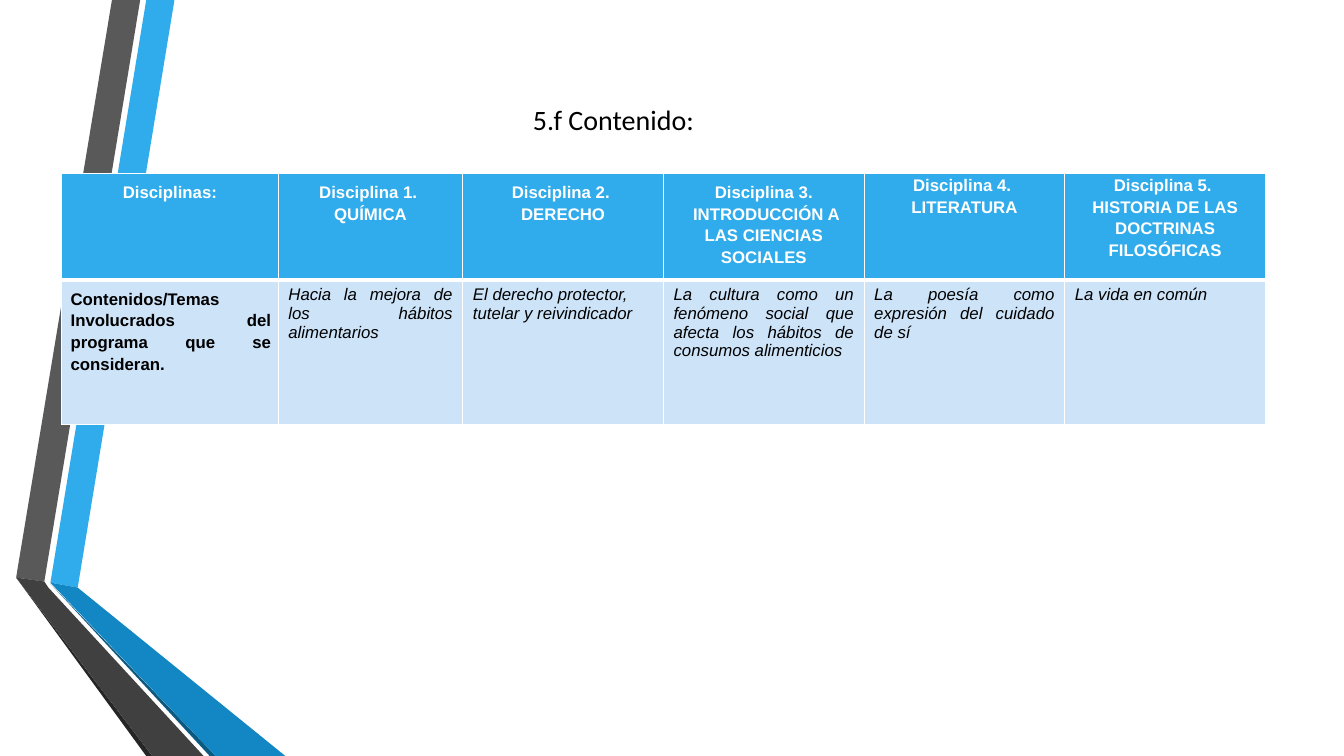
from dataclasses import dataclass

from lxml.etree import SubElement
from pptx import Presentation
from pptx.dml.color import RGBColor
from pptx.enum.text import MSO_ANCHOR as Anchor, PP_ALIGN as Align
from pptx.oxml.ns import qn
from pptx.util import Inches, Pt

WIDTH, HEIGHT = Inches(13.33), Inches(7.5)


@dataclass(frozen=True)
class Theme:
    blue: str = "30ACEC"
    blue_deep: str = "1287C3"
    blue_shade: str = "0C5A82"
    gray: str = "595959"
    gray_deep: str = "404040"
    gray_shade: str = "262626"
    pale: str = "CDE3F8"
    white: str = "FFFFFF"
    black: str = "000000"
    title_font: str = "Calibri"
    table_font: str = "Arial"
    title_size: int = 20
    table_size: int = 12
    thin: int = 1
    thick: int = 3


THEME = Theme()

RIBBONS = [
    (THEME.blue, [(3.75, 77.07), (5.78, 77.73), (12.98, 0), (10.88, 0)]),
    (THEME.gray, [(10.43, 0), (8.33, 0), (1.2, 76.4), (3.3, 76.93)]),
    (THEME.gray_shade, [(1.2, 76.4), (10.88, 100), (11.33, 100)]),
    (THEME.blue_shade, [(3.75, 77.2), (15.6, 100), (16.05, 100)]),
    (THEME.blue_deep, [(3.75, 77.07), (16.05, 100), (21.23, 100), (5.78, 77.73)]),
    (THEME.gray_deep, [(15.15, 100), (3.6, 77.73), (3.3, 76.93), (1.2, 76.4), (11.33, 100)]),
]

COLUMNS = [16.13, 13.73] + [14.93] * 4
ROWS = [13.33, 19.07]
HEADERS = [
    ["Disciplinas:"],
    ["Disciplina 1. ", "QUÍMICA"],
    ["Disciplina 2. ", "DERECHO"],
    ["Disciplina 3.", " INTRODUCCIÓN A LAS CIENCIAS SOCIALES"],
    ["Disciplina 4. ", "LITERATURA"],
    ["Disciplina 5. ", "HISTORIA DE LAS DOCTRINAS FILOSÓFICAS"],
]
ROW_LABEL = "Contenidos/Temas Involucrados del programa que se consideran."
CONTENTS = [
    ("Hacia la mejora de los hábitos alimentarios", Align.JUSTIFY),
    ("El derecho protector, tutelar y reivindicador", Align.LEFT),
    ("La cultura como un fenómeno social que afecta los hábitos de consumos alimenticios", Align.JUSTIFY),
    ("La poesía como expresión del cuidado de sí", Align.JUSTIFY),
    ("La vida en común", Align.LEFT),
]


def across(percent):
    return round(WIDTH * percent / 100)


def down(percent):
    return round(HEIGHT * percent / 100)


def add_ribbon(slide, color, corners):
    points = [(across(x), down(y)) for x, y in corners]
    builder = slide.shapes.build_freeform(*points[0])
    builder.add_line_segments(points[1:], close=True)
    shape = builder.convert_to_shape()
    shape.shadow.inherit = False
    shape.fill.solid()
    shape.fill.fore_color.rgb = RGBColor.from_string(color)
    shape.line.fill.background()


def write(frame, lines, font, size, color, align, spacing=1.0, bold=False, italic=False):
    frame.word_wrap = True
    for index, line in enumerate(lines):
        paragraph = frame.paragraphs[0] if index == 0 else frame.add_paragraph()
        paragraph.alignment = align
        paragraph.line_spacing = spacing
        run = paragraph.add_run()
        run.text = line
        run.font.name = font
        run.font.size = Pt(size)
        run.font.bold = bold
        run.font.italic = italic
        run.font.color.rgb = RGBColor.from_string(color)


def add_title(slide, text):
    shape = slide.shapes.add_textbox(across(9.45), down(8.53), across(72.38), down(14.4))
    shape.text_frame.vertical_anchor = Anchor.MIDDLE
    write(shape.text_frame, [text], THEME.title_font, THEME.title_size, THEME.black, Align.CENTER)


def set_borders(cell, top, bottom):
    properties = cell._tc.get_or_add_tcPr()
    widths = {"a:lnL": THEME.thin, "a:lnR": THEME.thin, "a:lnT": top, "a:lnB": bottom}
    for tag, width in widths.items():
        line = SubElement(properties, qn(tag), w=str(Pt(width)))
        fill = SubElement(line, qn("a:solidFill"))
        SubElement(fill, qn("a:srgbClr"), val=THEME.white)


def fill_cell(cell, lines, color, fill, align, margins, borders, **style):
    cell.margin_left, cell.margin_top, cell.margin_right, cell.margin_bottom = map(Inches, margins)
    set_borders(cell, *borders)
    cell.fill.solid()
    cell.fill.fore_color.rgb = RGBColor.from_string(fill)
    write(cell.text_frame, lines, THEME.table_font, THEME.table_size, color, align, **style)


def add_contents_table(slide):
    frame = slide.shapes.add_table(
        len(ROWS), len(COLUMNS), across(4.58), down(22.93), across(sum(COLUMNS)), down(sum(ROWS)))
    table = frame.table
    table.first_row = table.horz_banding = False
    for column, share in zip(table.columns, COLUMNS):
        column.width = across(share)
    for row, share in zip(table.rows, ROWS):
        row.height = down(share)

    header_borders = (THEME.thin, THEME.thick)
    body_borders = (THEME.thick, THEME.thin)
    for index, lines in enumerate(HEADERS):
        vertical = 0.07 if index < 4 else 0
        fill_cell(table.cell(0, index), lines, THEME.white, THEME.blue, Align.CENTER,
                  (0.07, vertical, 0.07, vertical), header_borders, spacing=1.15, bold=True)
    fill_cell(table.cell(1, 0), [ROW_LABEL], THEME.black, THEME.pale, Align.JUSTIFY,
              (0.09, 0.07, 0.07, 0.07), body_borders, spacing=1.15, bold=True)
    for index, (text, align) in enumerate(CONTENTS, start=1):
        fill_cell(table.cell(1, index), [text], THEME.black, THEME.pale, align,
                  (0.1, 0.05, 0.1, 0.05), body_borders, italic=True)


def main():
    presentation = Presentation()
    presentation.slide_width, presentation.slide_height = WIDTH, HEIGHT
    slide = presentation.slides.add_slide(presentation.slide_layouts[6])
    for color, corners in RIBBONS:
        add_ribbon(slide, color, corners)
    add_title(slide, "5.f Contenido:")
    add_contents_table(slide)
    presentation.save("out.pptx")


if __name__ == "__main__":
    main()
